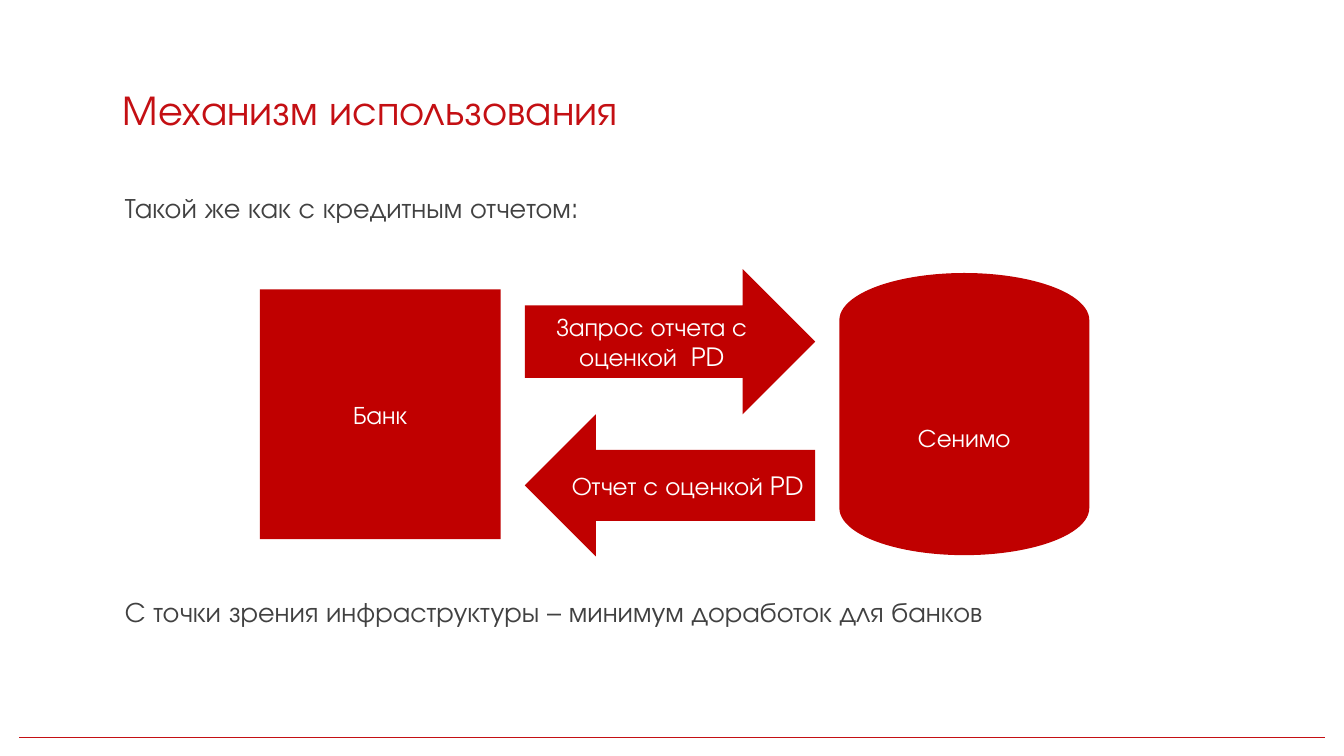
"""Build the slide showing how a bank exchanges reports with a credit bureau."""
from lxml import etree
from pptx import Presentation
from pptx.dml.color import RGBColor
from pptx.enum.shapes import MSO_CONNECTOR, MSO_SHAPE as Shape
from pptx.enum.text import MSO_ANCHOR as Anchor, PP_ALIGN as Align
from pptx.oxml.ns import qn
from pptx.util import Cm, Pt


def color(hex_value):
    return RGBColor.from_string(hex_value)


def write(shape, text, size, hex_value, align):
    shape.text_frame.word_wrap = True
    shape.text_frame.text = text
    paragraph = shape.text_frame.paragraphs[0]
    paragraph.alignment = align
    font = paragraph.runs[0].font
    font.name = "TeX Gyre Adventor"
    font.size = Pt(size)
    font.color.rgb = color(hex_value)
    return paragraph


presentation = Presentation()
presentation.slide_width = Cm(33.88)
presentation.slide_height = Cm(19.05)
slide = presentation.slides.add_slide(presentation.slide_layouts[6])

footer_line = slide.shapes.add_connector(
    MSO_CONNECTOR.STRAIGHT, Cm(0.48), Cm(18.57), Cm(33.4), Cm(18.57))
footer_line.line.color.rgb = color("C40F13")
footer_line.line.width = Pt(0.5)
etree.SubElement(footer_line._element.spPr, qn("a:effectLst"))

texts = [
    ("Механизм использования", 3.1, 0.81, 2.72, 30, "C40F13", Anchor.BOTTOM),
    ("Такой же как с кредитным отчетом:", 3.15, 4.8, 1.12, 20, "414141", Anchor.TOP),
    ("С точки зрения инфраструктуры – минимум доработок для банков",
     3.15, 14.99, 1.12, 20, "414141", Anchor.TOP),
]
for text, left, top, height, size, hex_value, anchor in texts:
    box = slide.shapes.add_textbox(Cm(left), Cm(top), Cm(27.66), Cm(height))
    frame = box.text_frame
    frame.margin_left = frame.margin_right = frame.margin_top = 0
    frame.margin_bottom = Cm(0.13) if anchor == Anchor.BOTTOM else 0
    frame.vertical_anchor = anchor
    paragraph = write(box, text, size, hex_value, Align.LEFT)
    if anchor == Anchor.BOTTOM:
        paragraph.line_spacing = 0.9

diagram = [
    (Shape.FLOWCHART_MAGNETIC_DISK, "Сенимо", 21.16, 6.88, 6.3, 7.11),
    (Shape.RECTANGLE, "Банк", 6.55, 7.29, 6.07, 6.3),
    (Shape.RIGHT_ARROW, "Запрос отчета с оценкой  PD", 13.23, 6.78, 7.32, 3.66),
    (Shape.LEFT_ARROW, "Отчет с оценкой PD", 13.23, 10.44, 7.32, 3.58),
]
for kind, text, left, top, width, height in diagram:
    shape = slide.shapes.add_shape(kind, Cm(left), Cm(top), Cm(width), Cm(height))
    shape.shadow.inherit = False
    shape.fill.solid()
    shape.fill.fore_color.rgb = color("C00000")
    shape.line.fill.background()
    shape.text_frame.vertical_anchor = Anchor.MIDDLE
    write(shape, text, 18, "FFFFFF", Align.CENTER)

presentation.save("out.pptx")
